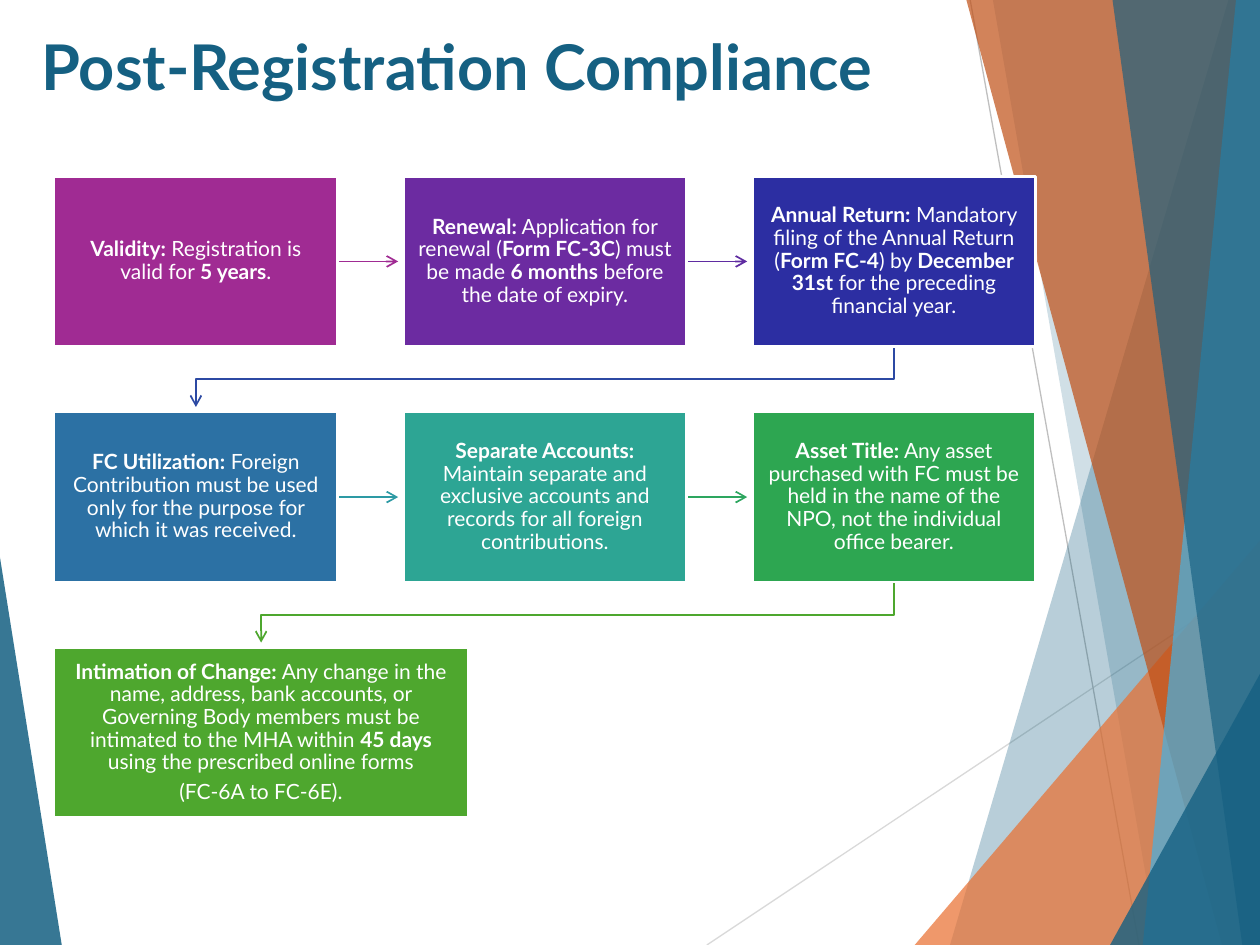
from dataclasses import dataclass

from lxml.etree import SubElement
from pptx import Presentation
from pptx.dml.color import RGBColor as RGB
from pptx.enum.shapes import MSO_CONNECTOR as CONN, MSO_SHAPE as SHAPE
from pptx.enum.text import MSO_ANCHOR as ANCHOR, PP_ALIGN as ALIGN
from pptx.oxml.ns import qn
from pptx.util import Inches, Pt


@dataclass(frozen=True)
class Theme:
    font: str = "Lato"
    title_size: float = 36
    body_size: float = 12
    white: str = "FFFFFF"
    teal: str = "156082"
    orange: str = "E97132"
    rust: str = "C04F15"
    sky: str = "46B1E1"
    light_grey: str = "D9D9D9"
    grey: str = "BFBFBF"
    arrow_width: float = 1
    border_width: float = 1.5
    hairline: float = 0.75


@dataclass(frozen=True)
class Grid:
    """Lengths in inches; columns and rows repeat at a fixed pitch."""
    left: float = 0.43
    top: float = 1.4
    col: float = 2.77
    row: float = 1.87
    width: float = 2.25
    height: float = 1.35
    arrow: float = 0.48
    bend: float = 0.26


def set_all(target, values):
    for name, value in values.items():
        setattr(target, name, value)


class SlideBuilder:
    def __init__(self, prs, theme, grid):
        self.prs, self.theme, self.grid = prs, theme, grid
        self.s = prs.slides.add_slide(prs.slide_layouts[6])

    def share(self, x, y):
        """Turn percentages of the slide into a position."""
        return round(self.prs.slide_width * x / 100), round(self.prs.slide_height * y / 100)

    def stroke(self, sp, color, width, arrow=False):
        sp.line.color.rgb = RGB.from_string(color)
        sp.line.width = Pt(width)
        if arrow:
            ln = sp._element.spPr.find(qn("a:ln"))
            SubElement(ln, qn("a:tailEnd"), type="arrow")

    def outline(self, points, close):
        builder = self.s.shapes.build_freeform(*points[0], scale=1.0)
        builder.add_line_segments(points[1:], close=close)
        sp = builder.convert_to_shape()
        sp.shadow.inherit = False
        return sp

    def facet(self, color, opacity, *points):
        sp = self.outline([self.share(*point) for point in points], True)
        sp.fill.solid()
        sp.fill.fore_color.rgb = RGB.from_string(color)
        sp.line.fill.background()
        rgb = sp._element.spPr.find(qn("a:solidFill")).find(qn("a:srgbClr"))
        SubElement(rgb, qn("a:alpha"), val=str(opacity * 1000))

    def connector(self, start, end, color, width, arrow=False):
        line = self.s.shapes.add_connector(CONN.STRAIGHT, *start, *end)
        self.stroke(line, color, width, arrow)
        SubElement(line._element.spPr, qn("a:effectLst"))
        return line

    def add_runs(self, p, text, size, color):
        """Parts between double asterisks are bold."""
        for i, part in enumerate(text.split("**")):
            if part:
                r = p.add_run()
                r.text = part
                set_all(r.font, {"name": self.theme.font, "size": Pt(size), "bold": i % 2 == 1})
                r.font.color.rgb = RGB.from_string(color)

    def title(self, text, x, y, w, h):
        tf = self.s.shapes.add_textbox(*self.share(x, y), *self.share(w, h)).text_frame
        tf.word_wrap = True
        self.add_runs(tf.paragraphs[0], f"**{text}**", self.theme.title_size, self.theme.teal)

    def step(self, col, row, color, paragraphs, span=1):
        g, t = self.grid, self.theme
        sp = self.s.shapes.add_shape(
            SHAPE.RECTANGLE, Inches(g.left + col * g.col), Inches(g.top + row * g.row),
            Inches(g.width * span), Inches(g.height))
        sp.shadow.inherit = False
        sp.fill.solid()
        sp.fill.fore_color.rgb = RGB.from_string(color)
        self.stroke(sp, t.white, t.border_width)
        tf = sp.text_frame
        set_all(tf, {"word_wrap": True, "vertical_anchor": ANCHOR.MIDDLE,
                     "margin_left": Inches(0.11), "margin_right": Inches(0.11),
                     "margin_top": Inches(0.12), "margin_bottom": Inches(0.12)})
        for i, text in enumerate(paragraphs):
            p = tf.add_paragraph() if i else tf.paragraphs[0]
            set_all(p, {"alignment": ALIGN.CENTER, "line_spacing": 0.9,
                        "space_after": Pt(0.35 * t.body_size)})
            self.add_runs(p, text, t.body_size, t.white)
        return sp

    def arrow_right(self, box, color):
        x, y = box.left + box.width, box.top + box.height // 2
        line = self.connector((x, y), (x + Inches(self.grid.arrow), y), color,
                              self.theme.arrow_width, True)
        line.begin_connect(box, 3)
        box._element.addprevious(line._element)

    def arrow_wrap(self, box, target, color):
        """Lead from the end of one row to the start of the next."""
        g = self.grid
        x1, x2 = (b.left + b.width // 2 for b in (box, target))
        y = box.top + box.height
        bend, end = y + Inches(g.bend), y + Inches(g.arrow)
        sp = self.outline([(x1, y), (x1, bend), (x2, bend), (x2, end)], False)
        sp.fill.background()
        self.stroke(sp, color, self.theme.arrow_width, True)
        box._element.addprevious(sp._element)


# Column, row, fill, colour of the arrow to the next step, paragraphs, width in columns
STEPS = [
    (0, 0, "A02B93", "A02B93", ["**Validity:** Registration is valid for **5 years**."], 1),
    (1, 0, "6C2BA1", "5F2CA1", ["**Renewal:** Application for renewal (**Form FC-3C**) must be "
                                "made **6 months** before the date of expiry."], 1),
    (2, 0, "2C2EA2", "2C49A3", ["**Annual Return:** Mandatory filing of the Annual Return "
                                "(**Form FC-4**) by **December 31st** for the preceding "
                                "financial year."], 1),
    (0, 1, "2C71A4", "2D9AA4", ["**FC Utilization:** Foreign Contribution must be used only for "
                                "the purpose for which it was received."], 1),
    (1, 1, "2DA594", "2DA65F", ["**Separate Accounts:** Maintain separate and exclusive accounts "
                                "and records for all foreign contributions."], 1),
    (2, 1, "2DA651", "4EA72E", ["**Asset Title:** Any asset purchased with FC must be held in "
                                "the name of the NPO, not the individual office bearer."], 1),
    (0, 2, "4EA72E", None, ["**Intimation of Change:** Any change in the name, address, bank "
                            "accounts, or Governing Body members must be intimated to the MHA "
                            "within **45 days** using the prescribed online forms",
                            "(FC-6A to FC-6E)."], 1.46),
]


def main():
    prs = Presentation()
    prs.slide_width, prs.slide_height = Inches(10), Inches(7.5)
    t = Theme()
    b = SlideBuilder(prs, t, Grid())

    # Background facets and thin lines
    b.facet(t.teal, 85, (0, 59), (4.9, 100), (0, 100))
    b.connector(b.share(56.1, 100), b.share(100, 61), t.light_grey, t.hairline)
    b.connector(b.share(77, 0), b.share(90.4, 100), t.grey, t.hairline)
    for color, opacity, top, bottom in [
        (t.teal, 30, (97.5, 0), 75.4),
        (t.teal, 20, (78.8, 0), 91.9),
        (t.orange, 72, (100, 57.2), 72.6),
        (t.rust, 70, (76.7, 0), 97),
        (t.sky, 70, (98.1, 0), 90.7),
        (t.teal, 65, (88.3, 0), 98.6),
        (t.teal, 80, (100, 71.3), 88.1),
    ]:
        corner = [(100, 0)] if top[0] < 100 else []
        b.facet(color, opacity, top, (bottom, 100), (100, 100), *corner)

    # Title
    b.title("Post-Registration Compliance", 2.3, 2.27, 70.5, 11.6)

    # Steps, then the arrows between them
    boxes = [b.step(col, row, fill, text, span) for col, row, fill, _, text, span in STEPS]
    for step, box, following in zip(STEPS, boxes, boxes[1:]):
        if following.top == box.top:
            b.arrow_right(box, step[3])
        else:
            b.arrow_wrap(box, following, step[3])

    prs.save("out.pptx")


if __name__ == "__main__":
    main()
